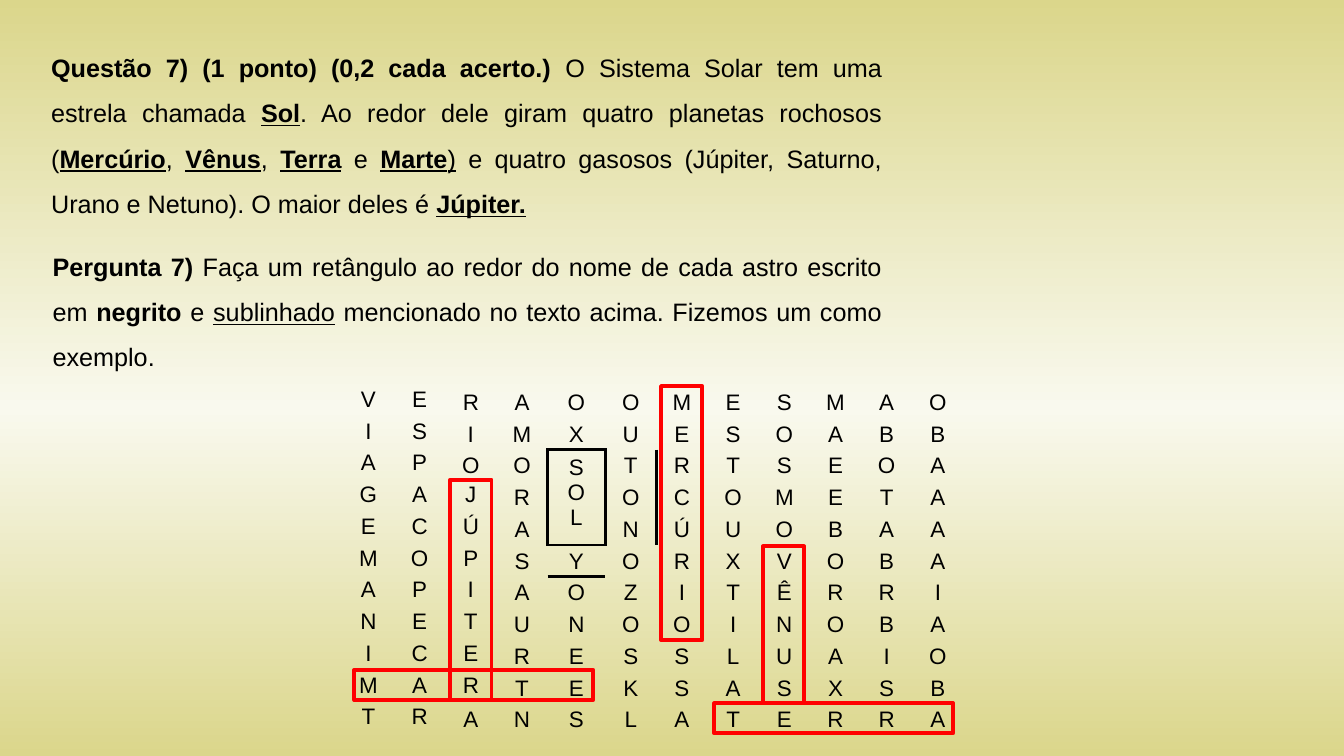
from copy import deepcopy
from dataclasses import dataclass

from lxml.etree import SubElement
from pptx import Presentation
from pptx.dml.color import RGBColor
from pptx.enum.shapes import MSO_SHAPE as Shape
from pptx.enum.text import MSO_ANCHOR as Anchor, MSO_AUTO_SIZE as AutoSize, PP_ALIGN as Align
from pptx.oxml.ns import qn
from pptx.util import Cm, Pt


@dataclass(frozen=True)
class Theme:
    """Colours, font and sizes of the slide."""
    font: str = "Arial"
    ink: str = "000000"
    mark: str = "FF0000"
    edge: str = "DBD68B"
    glow: str = "F9F9EE"
    body: float = 18
    letter: float = 16
    mark_line: float = 2.75
    cell_line: float = 2.25


THEME = Theme()
NO_GRID_STYLE = "{2D5ABB26-0587-4C30-8999-92F81FD0307C}"

STATEMENT = [
    ("Questão 7) (1 ponto) (0,2 cada acerto.) ", "b"),
    ("O Sistema Solar tem uma estrela chamada ", ""),
    ("Sol", "bu"),
    (". Ao redor dele giram quatro planetas rochosos (", ""),
    ("Mercúrio", "bu"),
    (", ", ""),
    ("Vênus", "bu"),
    (", ", ""),
    ("Terra", "bu"),
    (" e ", ""),
    ("Marte", "bu"),
    (")", "u"),
    (" e quatro gasosos (Júpiter, Saturno, Urano e Netuno). O maior deles é ", ""),
    ("Júpiter.", "bu"),
]
QUESTION = [
    ("Pergunta 7) ", "b"),
    ("Faça um retângulo ao redor do nome de cada astro escrito em ", ""),
    ("negrito", "b"),
    (" e ", ""),
    ("sublinhado", "u"),
    (" mencionado no texto acima. Fizemos um como exemplo.", ""),
]
LETTERS = [
    "VERAOOMESMAO",
    "ISIMXUESOABB",
    "APOOSTRTSEOA",
    "GAJROOCOMETA",
    "ECÚALNÚUOBAA",
    "MOPSYORXVOBA",
    "APIAOZITÊRRI",
    "NETUNOOINOBA",
    "ICERESSLUAIO",
    "MARTEKSASXSB",
    "TRANSLATERRA",
]
SUN_COLUMN, SUN_TOP, SUN_BOTTOM = 4, 2, 4
MARKS = {
    "Mercúrio": (16.66, 9.73, 1.04, 6.4),
    "Vênus": (19.23, 13.77, 1.04, 3.96),
    "Terra": (18, 17.72, 6.02, 0.76),
    "Marte": (8.93, 16.88, 6.02, 0.76),
    "Júpiter": (11.35, 12.09, 1.04, 5.56),
}


def set_font(paragraph, size):
    """Give a paragraph the theme font at the given size."""
    paragraph.font.name = THEME.font
    paragraph.font.size = Pt(size)
    paragraph.font.color.rgb = RGBColor.from_string(THEME.ink)


def paint_background(slide):
    """Fill the background with a vertical gradient of three stops."""
    fill = slide.background.fill
    fill.gradient()
    fill.gradient_angle = 270
    stop_list = slide.element.find(".//" + qn("a:gsLst"))
    stop_list.insert(1, deepcopy(stop_list[0]))
    colours = (THEME.edge, THEME.glow, THEME.edge)
    for stop, position, colour in zip(fill.gradient_stops, (0, 0.54, 1), colours):
        stop.position = position
        stop.color.rgb = RGBColor.from_string(colour)


def write_justified(shape, runs, anchor, auto_size):
    """Write one justified paragraph whose runs are bold (b) or underlined (u)."""
    frame = shape.text_frame
    frame.word_wrap = True
    frame.auto_size = auto_size
    frame.vertical_anchor = anchor
    paragraph = frame.paragraphs[0]
    paragraph.alignment = Align.JUSTIFY
    paragraph.line_spacing = 1.5
    set_font(paragraph, THEME.body)
    for text, style in runs:
        run = paragraph.add_run()
        run.text = text
        run.font.bold = "b" in style
        run.font.underline = "u" in style


def draw_borders(cell, sides):
    """Draw the cell borders named in sides, among L, R, T and B."""
    properties = cell._tc.get_or_add_tcPr()
    for side in sides:
        line = SubElement(properties, qn(f"a:ln{side}"), w=str(Pt(THEME.cell_line)))
        solid = SubElement(line, qn("a:solidFill"))
        SubElement(solid, qn("a:srgbClr"), val=THEME.ink)


def sun_sides(row, column):
    """Return the borders that a cell shares with the frame around SOL."""
    if SUN_TOP <= row <= SUN_BOTTOM:
        return {SUN_COLUMN - 1: "R", SUN_COLUMN: "LRTB", SUN_COLUMN + 1: "L"}.get(column, "")
    if column == SUN_COLUMN:
        return {SUN_TOP - 1: "B", SUN_BOTTOM + 1: "T"}.get(row, "")
    return ""


def fill_cell(cell, text, margins, anchor):
    """Write centred letters, one paragraph for each line of text."""
    cell.text = text
    cell.vertical_anchor = anchor
    side, top, bottom = margins
    cell.margin_left = cell.margin_right = Cm(side)
    cell.margin_top, cell.margin_bottom = Cm(top), Cm(bottom)
    for paragraph in cell.text_frame.paragraphs:
        paragraph.alignment = Align.CENTER
        set_font(paragraph, THEME.letter)


def add_word_search(slide):
    """Add the letter grid with SOL framed as the example."""
    rows, columns = len(LETTERS), len(LETTERS[0])
    frame = slide.shapes.add_table(rows, columns, Cm(8.64), Cm(9.73), Cm(15.64), Cm(8.8))
    table = frame.table
    table.first_row = table.horz_banding = False
    frame._element.find(".//" + qn("a:tableStyleId")).text = NO_GRID_STYLE
    for index, column in enumerate(table.columns):
        column.width = Cm(1.45 if index == SUN_COLUMN else 1.29)
    for row in table.rows:
        row.height = Cm(0.8)
    sun = table.cell(SUN_TOP, SUN_COLUMN)
    sun.merge(table.cell(SUN_BOTTOM, SUN_COLUMN))
    for row, line in enumerate(LETTERS):
        for column, letter in enumerate(line):
            cell = table.cell(row, column)
            draw_borders(cell, sun_sides(row, column))
            cell.fill.background()
            if not cell.is_spanned and not cell.is_merge_origin:
                at_top = column < 2 or column == 2 and 3 <= row <= 9
                fill_cell(cell, letter, (0.23, 0.03, 0), Anchor.TOP if at_top else Anchor.MIDDLE)
    word = "\n".join(line[SUN_COLUMN] for line in LETTERS[SUN_TOP:SUN_BOTTOM + 1])
    fill_cell(sun, word, (0.28, 0.15, 0.15), Anchor.TOP)


def add_mark(slide, box):
    """Outline a found word with a red rectangle."""
    mark = slide.shapes.add_shape(Shape.RECTANGLE, *map(Cm, box))
    mark.shadow.inherit = False
    mark.fill.background()
    mark.line.color.rgb = RGBColor.from_string(THEME.mark)
    mark.line.width = Pt(THEME.mark_line)


def main():
    """Build the slide and save it."""
    presentation = Presentation()
    presentation.slide_width, presentation.slide_height = Cm(33.87), Cm(19.05)
    slide = presentation.slides.add_slide(presentation.slide_layouts[5])
    paint_background(slide)
    title = slide.shapes.title
    title.left, title.top, title.width, title.height = map(Cm, (1.07, 6.32, 21.41, 3.18))
    write_justified(title, QUESTION, Anchor.BOTTOM, AutoSize.NONE)
    add_word_search(slide)
    for box in MARKS.values():
        add_mark(slide, box)
    statement = slide.shapes.add_textbox(*map(Cm, (1.04, 0.81, 21.44, 4.88)))
    write_justified(statement, STATEMENT, Anchor.TOP, AutoSize.SHAPE_TO_FIT_TEXT)
    presentation.save("out.pptx")


if __name__ == "__main__":
    main()
